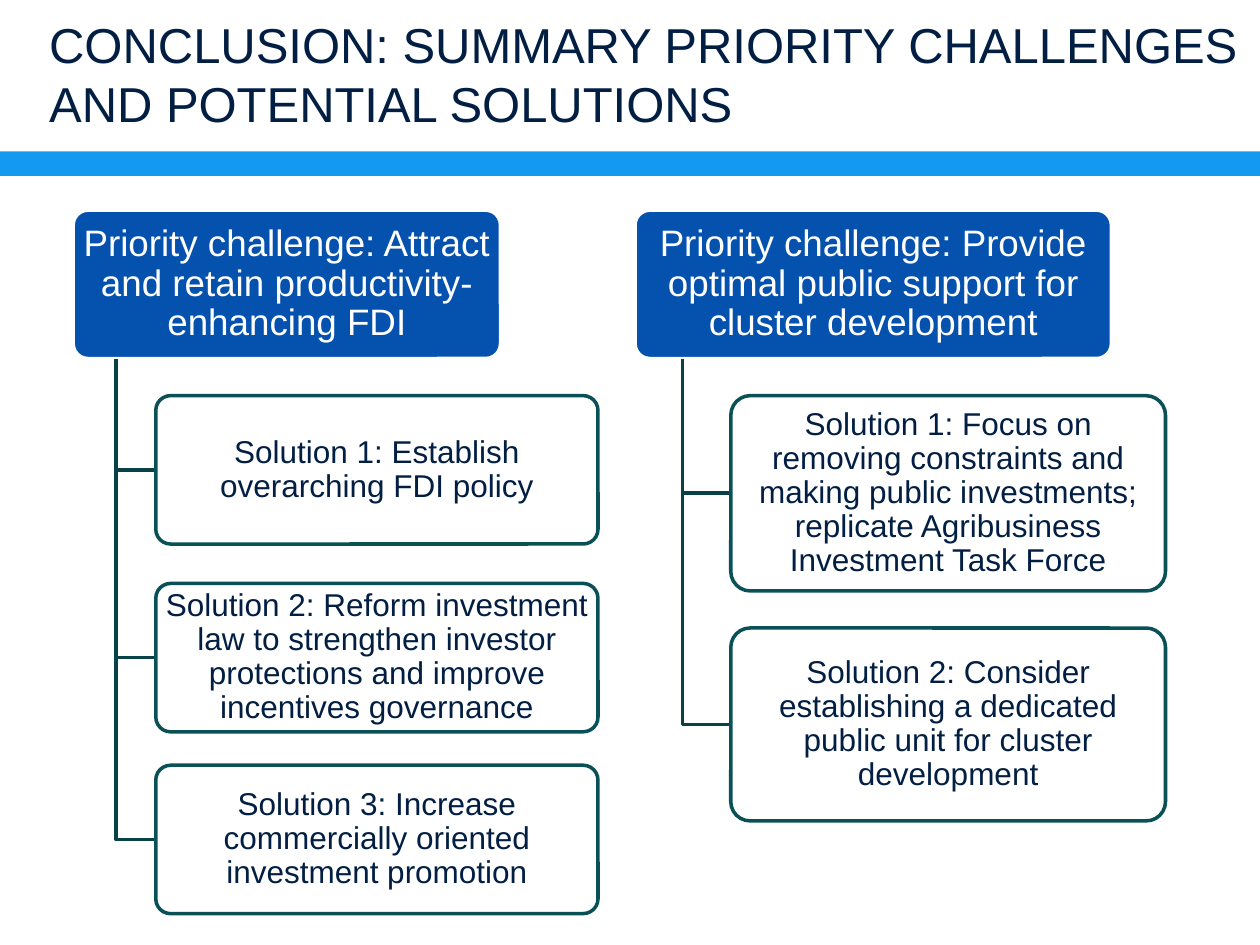
"""Build the summary slide of priority challenges and potential solutions."""
from lxml import etree
from pptx import Presentation
from pptx.dml.color import RGBColor
from pptx.enum.shapes import MSO_SHAPE
from pptx.enum.text import MSO_ANCHOR, PP_ALIGN
from pptx.oxml.ns import qn
from pptx.util import Pt

RECTANGLE = MSO_SHAPE.RECTANGLE
ROUNDED = MSO_SHAPE.ROUNDED_RECTANGLE
MIDDLE = MSO_ANCHOR.MIDDLE
CENTER = PP_ALIGN.CENTER
LEFT = PP_ALIGN.LEFT

COLORS = {
    "white": "FFFFFF",
    "band": "139AF0",
    "navy": "021F43",
    "challenge": "0551AE",
    "outline": "0A5157",
    "branch": "084146",
}
HEADER_TOP, HEADER_HEIGHT = 120.1, 84.8
HEADER_BOTTOM = HEADER_TOP + HEADER_HEIGHT

BRANCHES = [
    {
        "left": 41.8, "width": 244.2, "solution_left": 89, "solution_width": 252.7,
        "challenge": "Priority challenge: Attract and retain productivity-enhancing FDI",
        "solutions": [
            (226.1, 84.8, "Solution 1: Establish overarching FDI policy"),
            (333.4, 84.8, "Solution 2: Reform investment law to strengthen investor "
                          "protections and improve incentives governance"),
            (437.3, 84.8, "Solution 3: Increase commercially oriented investment promotion"),
        ],
    },
    {
        "left": 362.9, "width": 272.2, "solution_left": 417.6, "solution_width": 248.4,
        "challenge": "Priority challenge: Provide optimal public support for cluster development",
        "solutions": [
            (226.1, 111.6, "Solution 1: Focus on removing constraints and making public "
                           "investments; replicate Agribusiness Investment Task Force"),
            (358.9, 110.2, "Solution 2: Consider establishing a dedicated public unit "
                           "for cluster development"),
        ],
    },
]


def write_text(box, text, size, color, align, spacing, side, edge):
    frame = box.text_frame
    frame_format = {
        "word_wrap": True, "vertical_anchor": MIDDLE,
        "margin_left": Pt(side), "margin_right": Pt(side),
        "margin_top": Pt(edge), "margin_bottom": Pt(edge),
    }
    for name, value in frame_format.items():
        setattr(frame, name, value)
    para = frame.paragraphs[0]
    for name, value in {"alignment": align, "line_spacing": spacing}.items():
        setattr(para, name, value)
    span = para.add_run()
    span.text = text
    for name, value in {"name": "Arial", "size": Pt(size)}.items():
        setattr(span.font, name, value)
    span.font.color.rgb = RGBColor.from_string(COLORS[color])


def add_card(page, area, text, size, fill, line, text_color):
    card = page.shapes.add_shape(ROUNDED, *map(Pt, area))
    card.shadow.inherit = False
    card.adjustments[0] = 0.1
    card.fill.solid()
    card.fill.fore_color.rgb = RGBColor.from_string(COLORS[fill])
    card.line.color.rgb = RGBColor.from_string(COLORS[line])
    card.line.width = Pt(2)
    write_text(card, text, size, text_color, CENTER, 0.9, 2.8, 2)
    return card


deck = Presentation()
for name, value in {"slide_width": Pt(720), "slide_height": Pt(540)}.items():
    setattr(deck, name, value)
page = deck.slides.add_slide(deck.slide_layouts[6])

band = page.shapes.add_shape(RECTANGLE, Pt(0), Pt(86.6), Pt(720), Pt(14))
band.shadow.inherit = False
band.fill.solid()
band.fill.fore_color.rgb = RGBColor.from_string(COLORS["band"])
band.line.fill.background()

title = page.shapes.add_textbox(Pt(28.1), Pt(0), Pt(690.5), Pt(83.8))
write_text(title, "CONCLUSION: SUMMARY PRIORITY CHALLENGES AND POTENTIAL SOLUTIONS",
           28, "navy", LEFT, 1.0, 0, 0)

for branch in BRANCHES:
    left, width = branch["left"], branch["width"]
    header_area = (left, HEADER_TOP, width, HEADER_HEIGHT)
    add_card(page, header_area, branch["challenge"], 21, "challenge", "white", "white")
    trunk = left + width / 10
    solution_left = branch["solution_left"]
    for top, height, text in branch["solutions"]:
        middle = top + height / 2
        builder = page.shapes.build_freeform(Pt(trunk), Pt(HEADER_BOTTOM))
        bends = [(Pt(trunk), Pt(middle)), (Pt(solution_left), Pt(middle))]
        builder.add_line_segments(bends, close=False)
        elbow = builder.convert_to_shape()
        elbow.shadow.inherit = False
        elbow.fill.background()
        elbow.line.color.rgb = RGBColor.from_string(COLORS["branch"])
        elbow.line.width = Pt(2)

        solution_area = (solution_left, top, branch["solution_width"], height)
        card = add_card(page, solution_area, text, 18, "white", "outline", "navy")
        fill_color = card.element.spPr.find(qn("a:solidFill"))[0]
        etree.SubElement(fill_color, qn("a:alpha"), val="90000")

deck.save("out.pptx")
